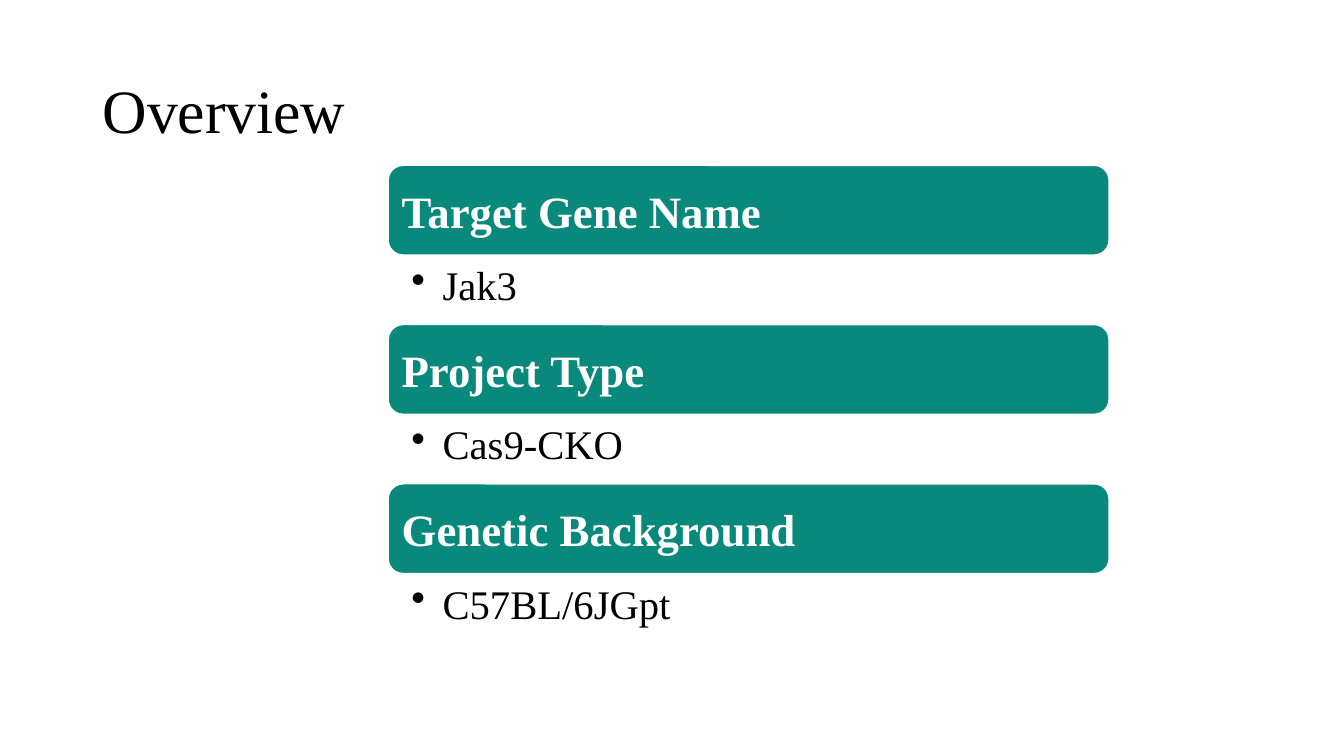
import pptx
import pptx.util
import pptx.dml.color
import pptx.enum.shapes
import pptx.enum.text
from lxml import etree

Inches, Pt = pptx.util.Inches, pptx.util.Pt
RGB = pptx.dml.color.RGBColor.from_string
ANCHOR = pptx.enum.text.MSO_ANCHOR

TITLE = "Overview"
FACTS = [
    ("Target Gene Name", "Jak3"),
    ("Project Type", "Cas9-CKO"),
    ("Genetic Background", "C57BL/6JGpt"),
]

THEME = {
    "font": "Times New Roman",
    "ink": "000000", "paper": "FFFFFF", "teal": "08897C",
    "title": 44, "head": 32, "item": 29,
}
LEFT, TOP, WIDTH = 3.85, 1.64, 7.15
BAR, ITEM = 0.89, 0.69
PITCH = BAR + ITEM


def put_text(shape, text, size, color="ink", bold=False, insets=(0.1, 0.05, 0.1, 0.05),
             anchor=ANCHOR.MIDDLE, bullet=None, spacing=None):
    """Fill a shape with one left-aligned paragraph; insets run left, top, right, bottom."""
    frame = shape.text_frame
    frame.word_wrap = True
    frame.vertical_anchor = anchor
    (frame.margin_left, frame.margin_top,
     frame.margin_right, frame.margin_bottom) = map(Inches, insets)
    para = frame.paragraphs[0]
    para.alignment = pptx.enum.text.PP_ALIGN.LEFT
    if spacing:
        para.line_spacing = spacing
    if bullet:
        props = para._p.get_or_add_pPr()
        props.set("marL", str(Inches(0.31)))
        props.set("indent", str(-Inches(0.31)))
        mark = etree.SubElement(props, pptx.oxml.ns.qn("a:buChar"))
        mark.set("char", bullet)
    run = para.add_run()
    run.text = text
    run.font.name = THEME["font"]
    run.font.size = Pt(THEME[size])
    run.font.bold = bold
    run.font.color.rgb = RGB(THEME[color])


def add_bar(slide, text, top):
    bar = slide.shapes.add_shape(
        pptx.enum.shapes.MSO_SHAPE.ROUNDED_RECTANGLE,
        Inches(LEFT), Inches(top), Inches(WIDTH), Inches(BAR))
    bar.shadow.inherit = False
    bar.fill.solid()
    bar.fill.fore_color.rgb = RGB(THEME["teal"])
    bar.line.color.rgb = RGB(THEME["paper"])
    bar.line.width = Pt(1)
    put_text(bar, text, "head", color="paper", bold=True, insets=(0.09,) * 4)


def add_box(slide, text, left, top, width, height, **style):
    box = slide.shapes.add_textbox(*map(Inches, (left, top, width, height)))
    put_text(box, text, **style)


def main():
    deck = pptx.Presentation()
    deck.slide_width, deck.slide_height = Inches(13.33), Inches(7.5)
    slide = deck.slides.add_slide(deck.slide_layouts[6])
    add_box(slide, TITLE, 0.92, 0.4, 11.5, 1.45, size="title", spacing=0.9)
    for row, (head, item) in enumerate(FACTS):
        top = TOP + row * PITCH
        add_bar(slide, head, top)
        add_box(slide, item, LEFT, top + BAR, WIDTH, ITEM, size="item", bullet="•",
                insets=(0.23, 0.05, 0.3, 0.05), anchor=ANCHOR.TOP)
    deck.save("out.pptx")


if __name__ == "__main__":
    main()
